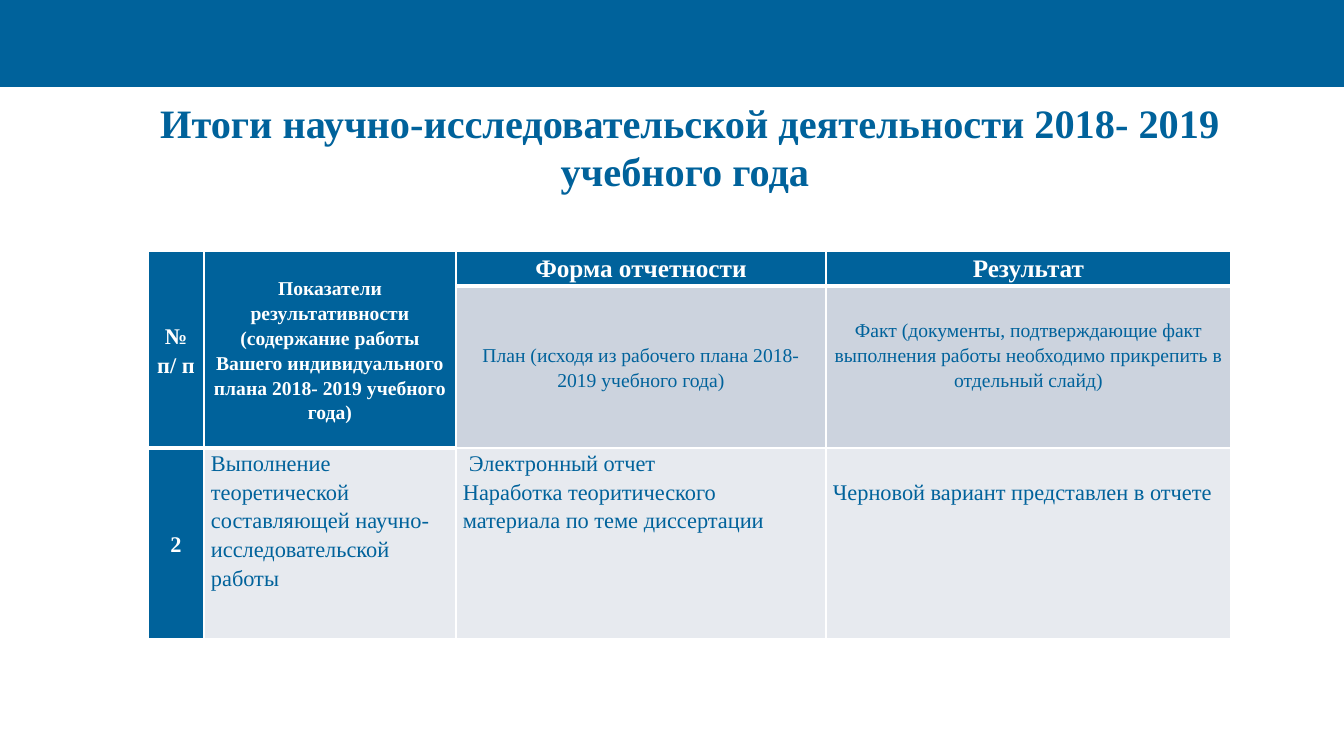
"""Build the slide with the research results table for the 2018-2019 academic year."""
from lxml import etree
from pptx import Presentation
from pptx.dml.color import RGBColor
from pptx.enum.shapes import MSO_SHAPE
from pptx.enum.text import MSO_ANCHOR, PP_ALIGN
from pptx.oxml.ns import qn
from pptx.util import Pt

PX = 9071.43
LEFT, CENTER = PP_ALIGN.LEFT, PP_ALIGN.CENTER
TOP, MIDDLE = MSO_ANCHOR.TOP, MSO_ANCHOR.MIDDLE
RECTANGLE = MSO_SHAPE.RECTANGLE

THEME = {
    "font": "Times New Roman",
    "blue": "00629B",
    "white": "FFFFFF",
    "plan": "CCD3DE",
    "body": "E7EAEF",
    "title_size": 28.8,
    "heading_size": 18,
    "body_size": 16,
    "note_size": 14,
}


def px(length):
    return round(length * PX)


def style(paragraph, size, color, bold, align):
    paragraph.alignment = align
    paragraph.font.name = THEME["font"]
    paragraph.font.size = Pt(THEME[size])
    paragraph.font.bold = bold
    paragraph.font.color.rgb = RGBColor.from_string(THEME[color])


deck = Presentation()
deck.slide_width, deck.slide_height = px(1344), px(756)
slide = deck.slides.add_slide(deck.slide_layouts[6])

banner = slide.shapes.add_shape(RECTANGLE, 0, 0, px(1344), px(87))
banner.shadow.inherit = False
banner.fill.solid()
banner.fill.fore_color.rgb = RGBColor.from_string(THEME["blue"])
banner.line.fill.background()

title = slide.shapes.add_textbox(px(85), px(101), px(1210), px(91)).text_frame
title.word_wrap = True
title.vertical_anchor = MIDDLE
title.text = "Итоги научно-исследовательской деятельности 2018- 2019 учебного года "
style(title.paragraphs[0], "title_size", "blue", True, CENTER)

COLUMNS = [56, 252, 370, 405]
ROWS = [32, 149, 191]
LAST_HEADER_ROW = [1, 1, 0, 0]

results = slide.shapes.add_table(
    len(ROWS), len(COLUMNS), px(148), px(251), px(sum(COLUMNS)), px(sum(ROWS))
).table
results.first_row = results.horz_banding = False
for column, width in zip(results.columns, COLUMNS):
    column.width = px(width)
for row, height in zip(results.rows, ROWS):
    row.height = px(height)

for r in range(len(ROWS)):
    for c, header_end in enumerate(LAST_HEADER_ROW):
        borders = {
            "a:lnL": 1,
            "a:lnR": 1,
            "a:lnT": 3 if r == header_end + 1 else 1,
            "a:lnB": 3 if r == header_end else 1,
        }
        properties = results.cell(r, c)._tc.get_or_add_tcPr()
        for side, width in borders.items():
            border = etree.SubElement(properties, qn(side), w=str(Pt(width)))
            paint = etree.SubElement(border, qn("a:solidFill"))
            etree.SubElement(paint, qn("a:srgbClr"), val=THEME["white"])

for c in (0, 1):
    results.cell(0, c).merge(results.cell(1, c))

HEADER = ("blue", "white", True, CENTER)
PLAN = ("plan", "blue", False, CENTER)
BODY = ("body", "blue", False, LEFT)
CELLS = [
    (0, 0, HEADER, "body_size", MIDDLE, ["№ п/ п"]),
    (0, 1, HEADER, "note_size", MIDDLE, [
        "Показатели результативности",
        "(содержание работы Вашего индивидуального плана 2018- 2019 учебного года)",
    ]),
    (0, 2, HEADER, "heading_size", TOP, ["Форма отчетности"]),
    (0, 3, HEADER, "heading_size", TOP, ["Результат"]),
    (1, 2, PLAN, "note_size", MIDDLE,
     ["План (исходя из рабочего плана 2018- 2019 учебного года)"]),
    (1, 3, PLAN, "note_size", MIDDLE, [
        "Факт (документы, подтверждающие факт выполнения работы "
        "необходимо прикрепить в отдельный слайд)",
    ]),
    (2, 0, HEADER, "body_size", MIDDLE, ["2"]),
    (2, 1, BODY, "body_size", TOP,
     ["Выполнение теоретической составляющей научно-исследовательской работы"]),
    (2, 2, BODY, "body_size", TOP, [
        "Электронный отчет",
        "Наработка теоритического материала по теме диссертации",
    ]),
    (2, 3, BODY, "body_size", TOP, ["Черновой вариант представлен в отчете"]),
]

for r, c, (fill, color, bold, align), size, anchor, lines in CELLS:
    cell = results.cell(r, c)
    cell.fill.solid()
    cell.fill.fore_color.rgb = RGBColor.from_string(THEME[fill])
    cell.vertical_anchor = anchor
    cell.margin_left = cell.margin_right = px(7)
    cell.margin_top = cell.margin_bottom = 0
    cell.text = "\n".join(lines)
    for paragraph in cell.text_frame.paragraphs:
        paragraph.line_spacing = 1.15
        style(paragraph, size, color, bold, align)

results.cell(1, 3).margin_bottom = px(25)
results.cell(2, 3).margin_top = px(29)
report = results.cell(2, 2).text_frame.paragraphs[0]
report._p.get_or_add_pPr().set("indent", str(px(6)))

deck.save("out.pptx")
